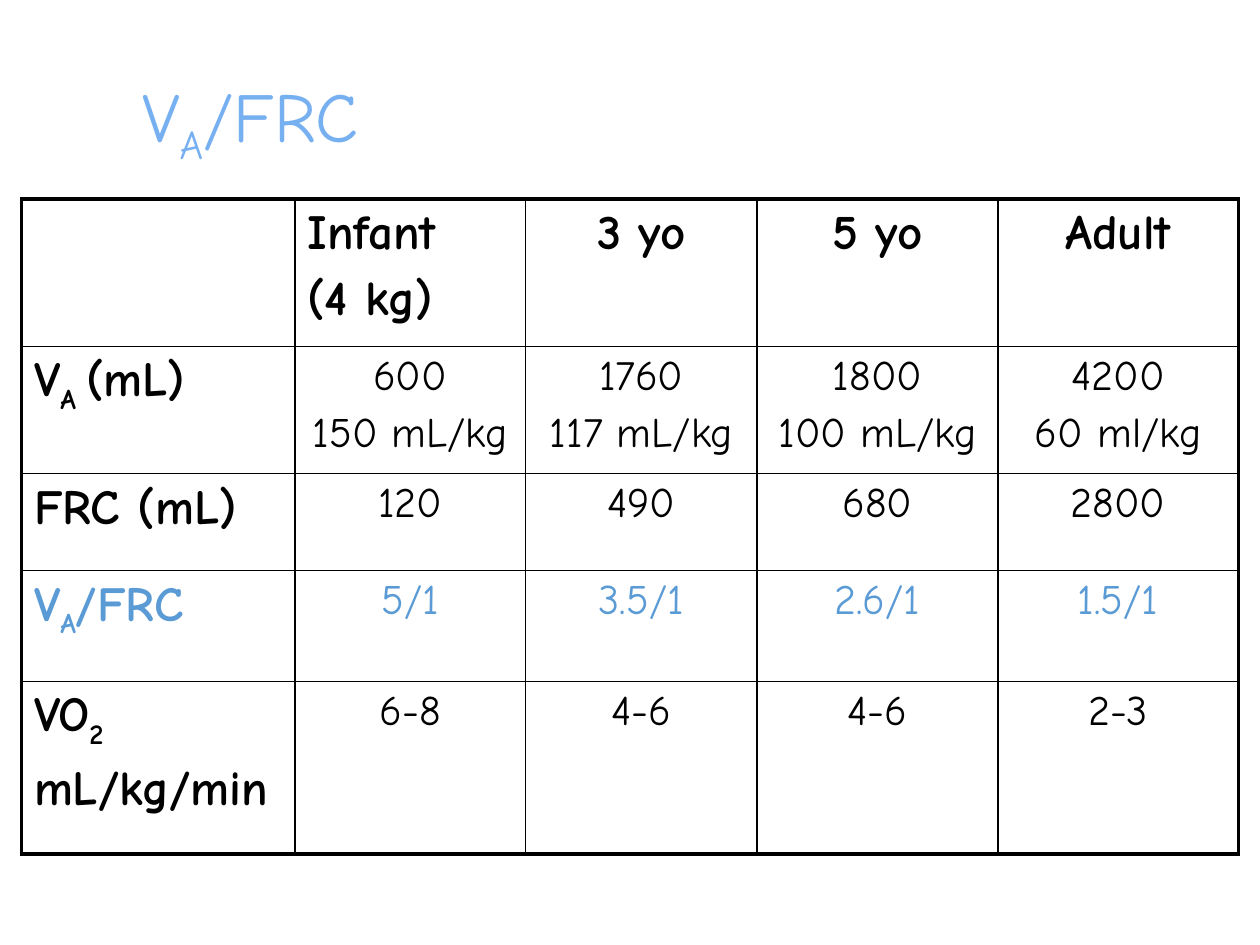
from lxml import etree
from pptx import Presentation
from pptx import util as u
from pptx.dml.color import RGBColor
from pptx.enum import text
from pptx.oxml import ns

FONT = "Comic Neue"
BLACK, BLUE, TITLE_BLUE = "000000", "5B9BD5", "77B0F1"
THIN, THICK = 1, 2.25
COLUMN_SHARES = [2.17, 1.83, 1.84, 1.91, 1.91]
ROW_SHARES = [1.17, 1.01, 0.77, 0.88, 1.37]
ROWS = [
    [[], ["Infant", "(4 kg)"], ["3 yo"], ["5 yo"], ["Adult"]],
    [["V_A _(mL)"], ["600", "150 mL/kg"], ["1760", "117 mL/kg"],
     ["1800", "100 mL/kg"], ["4200", "60 ml/kg"]],
    [["FRC (mL)"], ["120"], ["490"], ["680"], ["2800"]],
    [["V_A_/FRC"], ["5/1"], ["3.5/1"], ["2.6/1"], ["1.5/1"]],
    [["VO_2_", "mL/kg/min"], ["6-8"], ["4-6"], ["4-6"], ["2-3"]],
]
RATIO_ROW = 3


def rgb(value):
    """Turn a hex string into a colour."""
    return RGBColor.from_string(value)


def percent_box(deck, left, top, width, height):
    """Turn percentages of the slide into a box of lengths."""
    return [u.Emu(int(share * side / 100)) for share, side in
            zip((left, top, width, height), (deck.slide_width, deck.slide_height) * 2)]


def write(paragraph, words, color, **formats):
    """Write words into a paragraph, lowering each part between underscores."""
    for index, part in enumerate(words.split("_")):
        if not part:
            continue
        run = paragraph.add_run()
        run.text = part
        for name, value in {"name": FONT, **formats}.items():
            setattr(run.font, name, value)
        run.font.color.rgb = rgb(color)
        if index % 2:
            run.font._element.set("baseline", "-25000")


def add_borders(cell, widths):
    """Draw the left, right, top and bottom borders of a cell."""
    properties = cell._tc.get_or_add_tcPr()
    for side, width in zip("LRTB", widths):
        line = etree.SubElement(properties, ns.qn(f"a:ln{side}"), w=str(u.Pt(width)))
        fill = etree.SubElement(line, ns.qn("a:solidFill"))
        etree.SubElement(fill, ns.qn("a:srgbClr"), val=BLACK)


def add_title(slide, box):
    """Place the slide title in its box."""
    frame = slide.shapes.add_textbox(*box).text_frame
    frame.word_wrap = True
    frame.vertical_anchor = text.MSO_ANCHOR.MIDDLE
    heading = frame.paragraphs[0]
    heading.line_spacing = 0.9
    heading._p.get_or_add_pPr().set("marL", str(u.Inches(0.53)))
    write(heading, "V_A_/FRC", TITLE_BLUE, size=u.Pt(40))


def fill_cell(cell, lines, size, bold, color, align):
    """Write the lines of one table cell."""
    frame = cell.text_frame
    for index, words in enumerate(lines):
        paragraph = frame.add_paragraph() if index else frame.paragraphs[0]
        paragraph.alignment = align
        if index:
            paragraph.space_before = u.Pt(size * 0.2)
        write(paragraph, words, color, size=u.Pt(size), bold=bold)


def add_age_table(slide, box):
    """Place the ventilation table, sharing its box among columns and rows."""
    last_row, last_column = len(ROWS) - 1, len(COLUMN_SHARES) - 1
    table = slide.shapes.add_table(last_row + 1, last_column + 1, *box).table
    table.first_row = table.horz_banding = False
    for column, share in zip(table.columns, COLUMN_SHARES):
        column.width = int(box[2] * share / sum(COLUMN_SHARES))
    for row, share in zip(table.rows, ROW_SHARES):
        row.height = int(box[3] * share / sum(ROW_SHARES))
    for r, row in enumerate(ROWS):
        for c, lines in enumerate(row):
            cell = table.cell(r, c)
            outer = (c == 0, c == last_column, r == 0, r == last_row)
            add_borders(cell, [THICK if edge else THIN for edge in outer])
            cell.fill.background()
            heading = r == 0 or c == 0
            left = c == 0 or (r, c) == (0, 1)
            fill_cell(cell, lines, 28 if heading else 24, heading,
                      BLUE if r == RATIO_ROW else BLACK,
                      text.PP_ALIGN.LEFT if left else text.PP_ALIGN.CENTER)


def main():
    """Build the slide and save it."""
    deck = Presentation()
    deck.slide_width, deck.slide_height = u.Inches(10), u.Inches(7.5)
    slide = deck.slides.add_slide(deck.slide_layouts[6])
    add_title(slide, percent_box(deck, 5, 4, 90, 16.67))
    add_age_table(slide, percent_box(deck, 1.7, 21.07, 96.6, 69.33))
    deck.save("out.pptx")


if __name__ == "__main__":
    main()
